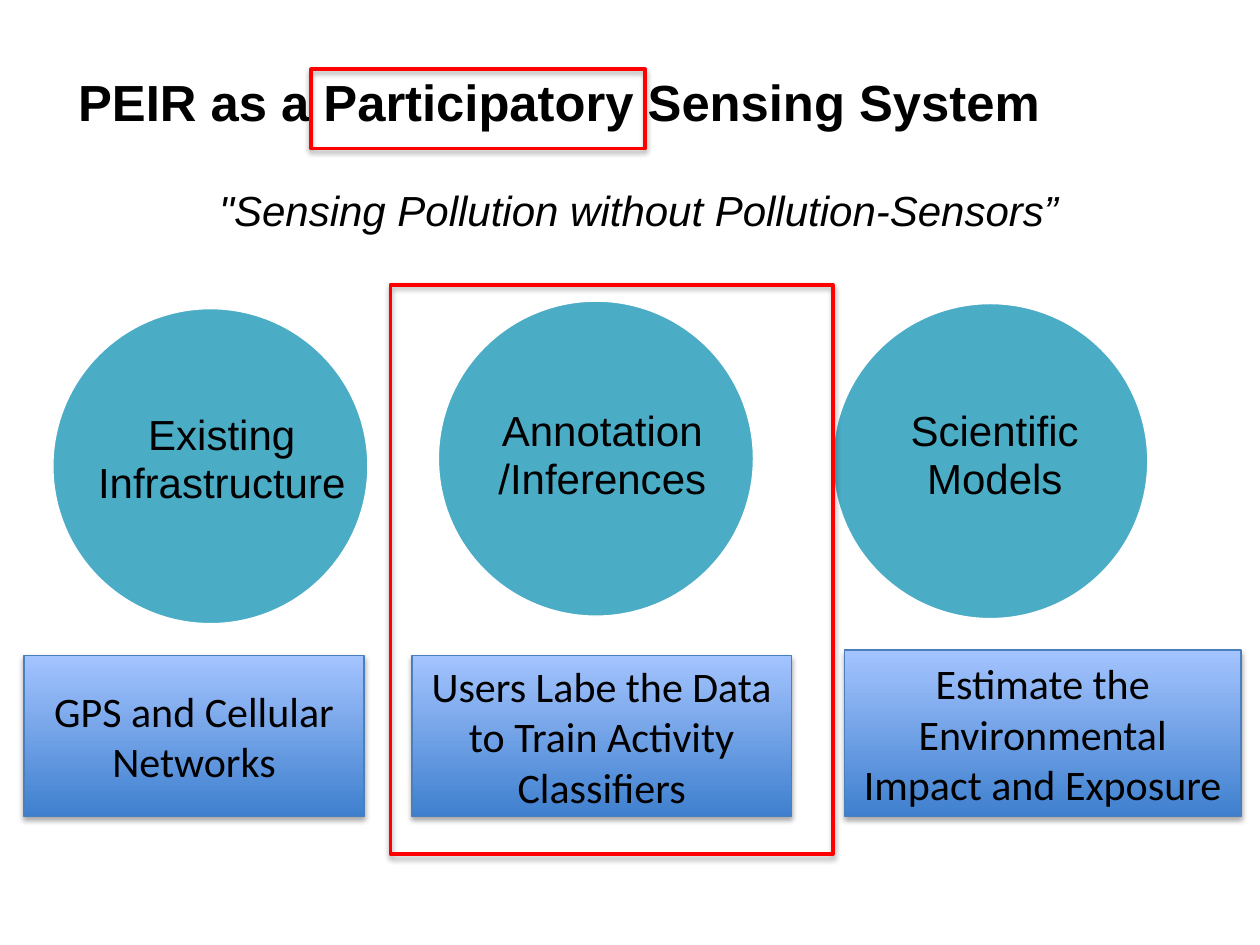
import dataclasses

import lxml.etree
import pptx
import pptx.dml.color
import pptx.enum.shapes
import pptx.enum.text
import pptx.oxml.ns
import pptx.util
from pptx.util import Inches

ALIGN = pptx.enum.text.PP_ALIGN
SHAPE = pptx.enum.shapes.MSO_SHAPE
CIRCLE_SIZE = 2.5
BLACK = "000000"


@dataclasses.dataclass(frozen=True)
class Box:
    left: float
    top: float
    width: float
    height: float

    def lengths(self) -> list:
        return [Inches(n) for n in (self.left, self.top, self.width, self.height)]


@dataclasses.dataclass(frozen=True)
class Pillar:
    circle_left: float
    circle_top: float
    caption: Box
    caption_lines: tuple[str, ...]
    detail: Box
    detail_text: str


PILLARS = [
    Pillar(0.42, 2.45, Box(0.62, 3.27, 2.28, 1.15), ("Existing", "Infrastructure"),
           Box(0.19, 5.2, 2.7, 1.28), "GPS and Cellular Networks"),
    Pillar(3.48, 2.39, Box(3.64, 3.24, 2.28, 0.77), ("Annotation", "/Inferences"),
           Box(3.27, 5.2, 3.01, 1.28), "Users Labe the Data to Train Activity Classifiers"),
    Pillar(6.61, 2.41, Box(6.03, 3.24, 3.73, 0.77), ("Scientific", "Models"),
           Box(6.7, 5.16, 3.15, 1.32), "Estimate the Environmental Impact and Exposure"),
]
HIGHLIGHTS = [Box(3.1, 2.26, 3.51, 4.52), Box(2.47, 0.55, 2.65, 0.63)]


def rgb(value: str) -> pptx.dml.color.RGBColor:
    return pptx.dml.color.RGBColor.from_string(value)


def add_run(paragraph, text: str, size: float = 24, font: str = "Arial",
            bold: bool = False, italic: bool = False) -> None:
    run = paragraph.add_run()
    run.text = text
    run.font.name = font
    run.font.size = pptx.util.Pt(size)
    run.font.bold = bold
    run.font.italic = italic
    run.font.color.rgb = rgb(BLACK)


def add_label(slide, box: Box, lines: tuple[str, ...], align=ALIGN.LEFT,
              indent: float = 0, **style) -> None:
    frame = slide.shapes.add_textbox(*box.lengths()).text_frame
    frame.word_wrap = True
    frame.margin_left = Inches(indent)
    frame.margin_top = frame.margin_right = frame.margin_bottom = 0
    for index, line in enumerate(lines):
        paragraph = frame.paragraphs[0] if index == 0 else frame.add_paragraph()
        paragraph.alignment = align
        paragraph.line_spacing = 0.95
        add_run(paragraph, line, **style)


def add_outlined(slide, preset, box: Box, line: str, width: float):
    shape = slide.shapes.add_shape(preset, *box.lengths())
    shape.shadow.inherit = False
    shape.line.color.rgb = rgb(line)
    shape.line.width = pptx.util.Pt(width)
    return shape


def add_shadow(shape) -> None:
    qn = pptx.oxml.ns.qn
    effects = shape._element.spPr.find(qn("a:effectLst"))
    shadow = lxml.etree.SubElement(
        effects, qn("a:outerShdw"), blurRad="40000", dist="23000",
        dir="5400000", rotWithShape="0")
    color = lxml.etree.SubElement(shadow, qn("a:srgbClr"), val=BLACK)
    lxml.etree.SubElement(color, qn("a:alpha"), val="35000")


def add_circle(slide, left: float, top: float) -> None:
    box = Box(left, top, CIRCLE_SIZE, CIRCLE_SIZE)
    circle = add_outlined(slide, SHAPE.OVAL, box, "FFFFFF", 0.75)
    circle.fill.solid()
    circle.fill.fore_color.rgb = rgb("4BACC6")


def add_detail(slide, box: Box, text: str) -> None:
    detail = add_outlined(slide, SHAPE.RECTANGLE, box, "4B7EBC", 0.75)
    detail.fill.gradient()
    detail.fill.gradient_angle = 90
    for stop, position, color in zip(detail.fill.gradient_stops, (0, 1), ("3F80CE", "A4C4FF")):
        stop.position = position
        stop.color.rgb = rgb(color)
    add_shadow(detail)
    frame = detail.text_frame
    frame.word_wrap = True
    frame.vertical_anchor = pptx.enum.text.MSO_ANCHOR.MIDDLE
    frame.paragraphs[0].alignment = ALIGN.CENTER
    add_run(frame.paragraphs[0], text, font="Calibri")


def add_highlight(slide, box: Box) -> None:
    highlight = add_outlined(slide, SHAPE.RECTANGLE, box, "FF0000", 2)
    highlight.fill.background()
    add_shadow(highlight)


def main() -> None:
    deck = pptx.Presentation()
    deck.slide_width, deck.slide_height = Inches(10), Inches(7.5)
    slide = deck.slides.add_slide(deck.slide_layouts[6])

    # Title and motto
    add_label(slide, Box(0.62, 0.6, 8.75, 0.57),
              ("PEIR as a Participatory Sensing System",), size=29, bold=True)
    add_label(slide, Box(0.62, 1.49, 8.93, 0.77),
              ('"Sensing Pollution without Pollution-Sensors”',), indent=1.12, italic=True)

    # Three pillars: circle, caption and detail below
    for pillar in PILLARS:
        add_circle(slide, pillar.circle_left, pillar.circle_top)
        add_label(slide, pillar.caption, pillar.caption_lines, ALIGN.CENTER)
        add_detail(slide, pillar.detail, pillar.detail_text)

    # Red frames on the participatory part
    for box in HIGHLIGHTS:
        add_highlight(slide, box)

    deck.save("out.pptx")


if __name__ == "__main__":
    main()
